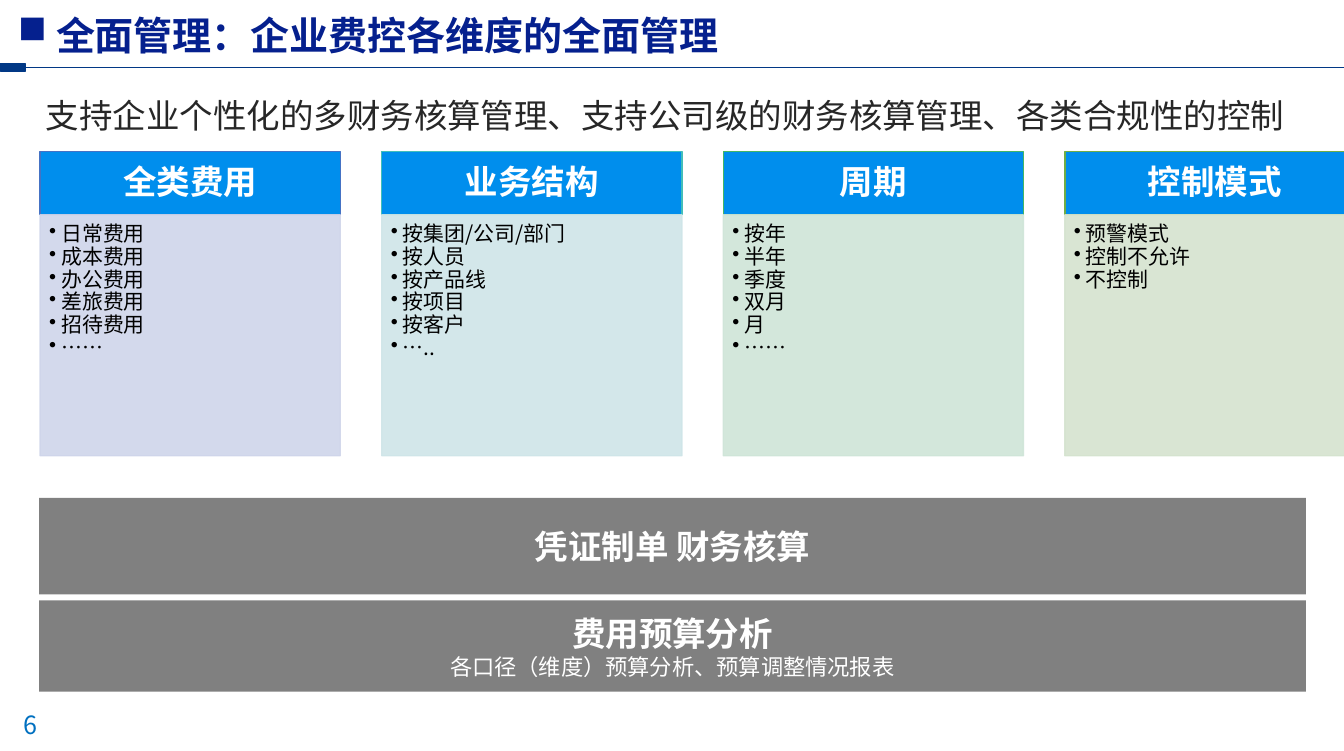
from dataclasses import dataclass
from typing import Any

from lxml import etree
from pptx import Presentation
from pptx.dml.color import RGBColor
from pptx.enum.shapes import MSO_CONNECTOR, MSO_SHAPE
from pptx.enum.text import MSO_ANCHOR, PP_ALIGN
from pptx.oxml.ns import qn
from pptx.util import Inches, Pt

RECTANGLE = MSO_SHAPE.RECTANGLE
STRAIGHT = MSO_CONNECTOR.STRAIGHT
TOP, MIDDLE = MSO_ANCHOR.TOP, MSO_ANCHOR.MIDDLE
LEFT, CENTER = PP_ALIGN.LEFT, PP_ALIGN.CENTER
RIGHT_SIDE = 3


@dataclass(frozen=True)
class Theme:
    font: str = "Noto Sans CJK SC"
    navy: str = "013885"
    title: str = "05208E"
    number: str = "0070C0"
    header: str = "008EED"
    band: str = "808080"
    white: str = "FFFFFF"
    black: str = "000000"
    body: str = "272727"
    title_size: int = 28
    heading_size: int = 24
    number_size: int = 18
    note_size: int = 16
    item_size: int = 15


@dataclass(frozen=True)
class Box:
    left: float
    top: float
    width: float
    height: float

    def lengths(self) -> list[int]:
        return [Inches(value) for value in (self.left, self.top, self.width, self.height)]


@dataclass(frozen=True)
class Line:
    text: str
    size: int
    color: str
    bold: bool = False
    align: Any = LEFT
    spacing: float = 1.0
    bullet: str = ""
    indent: float = 0


@dataclass(frozen=True)
class Column:
    heading: str
    items: list[str]
    border: str
    tint: str


@dataclass(frozen=True)
class Band:
    box: Box
    heading: str
    note: str = ""


THEME = Theme()
DEFAULT_INSETS = (0.1, 0.05, 0.1, 0.05)
HEADER_INSETS = (0.19, 0.11, 0.19, 0.11)
ITEM_INSETS = (0.09, 0.09, 0.12, 0.13)
COLUMN_LEFT, COLUMN_STEP, COLUMN_WIDTH = 0.4, 3.403, 2.99
HEADER_TOP, HEADER_HEIGHT, LIST_HEIGHT = 1.51, 0.63, 2.4

COLUMNS = [
    Column("全类费用", ["日常费用", "成本费用", "办公费用", "差旅费用", "招待费用", "……"], "4472C4", "CFD5EA"),
    Column("业务结构", ["按集团/公司/部门", "按人员", "按产品线", "按项目", "按客户", "….."], "43BEB9", "CFE5E8"),
    Column("周期", ["按年", "半年", "季度", "双月", "月", "……"], "45B664", "CFE5D8"),
    Column("控制模式", ["预警模式", "控制不允许", "不控制"], "70AD47", "D5E3CF"),
]
BANDS = [
    Band(Box(0.39, 4.96, 12.62, 0.96), "凭证制单 财务核算"),
    Band(Box(0.39, 5.98, 12.62, 0.91), "费用预算分析", "各口径（维度）预算分析、预算调整情况报表"),
]


def apply_format(target: Any, values: dict[str, Any]) -> None:
    for name, value in values.items():
        setattr(target, name, value)


def add_bullet(paragraph: Any, character: str, indent: float) -> None:
    properties = paragraph._p.get_or_add_pPr()
    properties.set("marL", str(Inches(indent)))
    properties.set("indent", str(-Inches(indent)))
    etree.SubElement(properties, qn("a:buChar")).set("char", character)


def write_text(shape: Any, lines: list[Line], anchor: Any = TOP,
               insets: tuple[float, ...] = DEFAULT_INSETS) -> None:
    frame = shape.text_frame
    sides = ("margin_left", "margin_top", "margin_right", "margin_bottom")
    apply_format(frame, {"word_wrap": True, "vertical_anchor": anchor}
                 | dict(zip(sides, map(Inches, insets))))
    for index, line in enumerate(lines):
        paragraph = frame.add_paragraph() if index else frame.paragraphs[0]
        apply_format(paragraph, {"alignment": line.align, "line_spacing": line.spacing})
        if line.bullet:
            add_bullet(paragraph, line.bullet, line.indent)
        run = paragraph.add_run()
        run.text = line.text
        apply_format(run.font, {"name": THEME.font, "size": Pt(line.size), "bold": line.bold})
        run.font.color.rgb = RGBColor.from_string(line.color)
        etree.SubElement(run.font._element, qn("a:ea")).set("typeface", THEME.font)


def add_text(slide: Any, box: Box, line: Line, anchor: Any = TOP) -> None:
    write_text(slide.shapes.add_textbox(*box.lengths()), [line], anchor)


def set_opacity(fill: Any, percent: int) -> None:
    color = fill._xPr.find(qn("a:solidFill"))[0]
    etree.SubElement(color, qn("a:alpha")).set("val", str(percent * 1000))


def add_rectangle(slide: Any, box: Box, fill: str, border: str = "",
                  border_width: float = 1, opacity: int = 100) -> Any:
    shape = slide.shapes.add_shape(RECTANGLE, *box.lengths())
    shape.shadow.inherit = False
    shape.fill.solid()
    shape.fill.fore_color.rgb = RGBColor.from_string(fill)
    if border:
        shape.line.color.rgb = RGBColor.from_string(border)
        shape.line.width = Pt(border_width)
    else:
        shape.line.fill.background()
    if opacity < 100:
        set_opacity(shape.fill, opacity)
        set_opacity(shape.line.fill, opacity)
    return shape


def add_title(slide: Any, slide_width: int) -> None:
    accent = add_rectangle(slide, Box(0.01, 0.63, 0.24, 0.08), THEME.navy, THEME.navy, 0.75)
    rule = slide.shapes.add_connector(STRAIGHT, slide_width, Inches(0.67), Inches(0.25), Inches(0.67))
    rule.end_connect(accent, RIGHT_SIDE)
    rule.line.color.rgb = RGBColor.from_string(THEME.navy)
    rule.line.width = Pt(0.5)
    etree.SubElement(rule._element.spPr, qn("a:effectLst"))
    add_text(slide, Box(0.08, 0.06, 7.51, 0.59),
             Line("全面管理：企业费控各维度的全面管理", THEME.title_size, THEME.title, True,
                  bullet="■", indent=0.38))


def add_column(slide: Any, column: Column, left: float) -> None:
    header = add_rectangle(slide, Box(left, HEADER_TOP, COLUMN_WIDTH, HEADER_HEIGHT),
                           THEME.header, column.border)
    write_text(header, [Line(column.heading, THEME.heading_size, THEME.white, True, CENTER, 0.9)],
               MIDDLE, HEADER_INSETS)
    panel = add_rectangle(slide, Box(left, HEADER_TOP + HEADER_HEIGHT, COLUMN_WIDTH, LIST_HEIGHT),
                          column.tint, column.tint, opacity=90)
    write_text(panel, [Line(item, THEME.item_size, THEME.black, spacing=0.9, bullet="•", indent=0.12)
                       for item in column.items], TOP, ITEM_INSETS)


def add_band(slide: Any, band: Band) -> None:
    lines = [Line(band.heading, THEME.heading_size, THEME.white, True, CENTER)]
    if band.note:
        lines.append(Line(band.note, THEME.note_size, THEME.white, align=CENTER))
    write_text(add_rectangle(slide, band.box, THEME.band), lines, MIDDLE)


def main() -> None:
    presentation = Presentation()
    presentation.slide_width, presentation.slide_height = Inches(13.39), Inches(7.48)
    slide = presentation.slides.add_slide(presentation.slide_layouts[6])
    add_title(slide, presentation.slide_width)
    add_text(slide, Box(0.14, 7.02, 0.55, 0.4), Line("6", THEME.number_size, THEME.number), MIDDLE)
    for index, column in enumerate(COLUMNS):
        add_column(slide, column, COLUMN_LEFT + index * COLUMN_STEP)
    for band in BANDS:
        add_band(slide, band)
    add_text(slide, Box(0.36, 0.7, 13.19, 0.64),
             Line("支持企业个性化的多财务核算管理、支持公司级的财务核算管理、各类合规性的控制",
                  THEME.heading_size, THEME.body, spacing=1.5))
    presentation.save("out.pptx")


if __name__ == "__main__":
    main()
